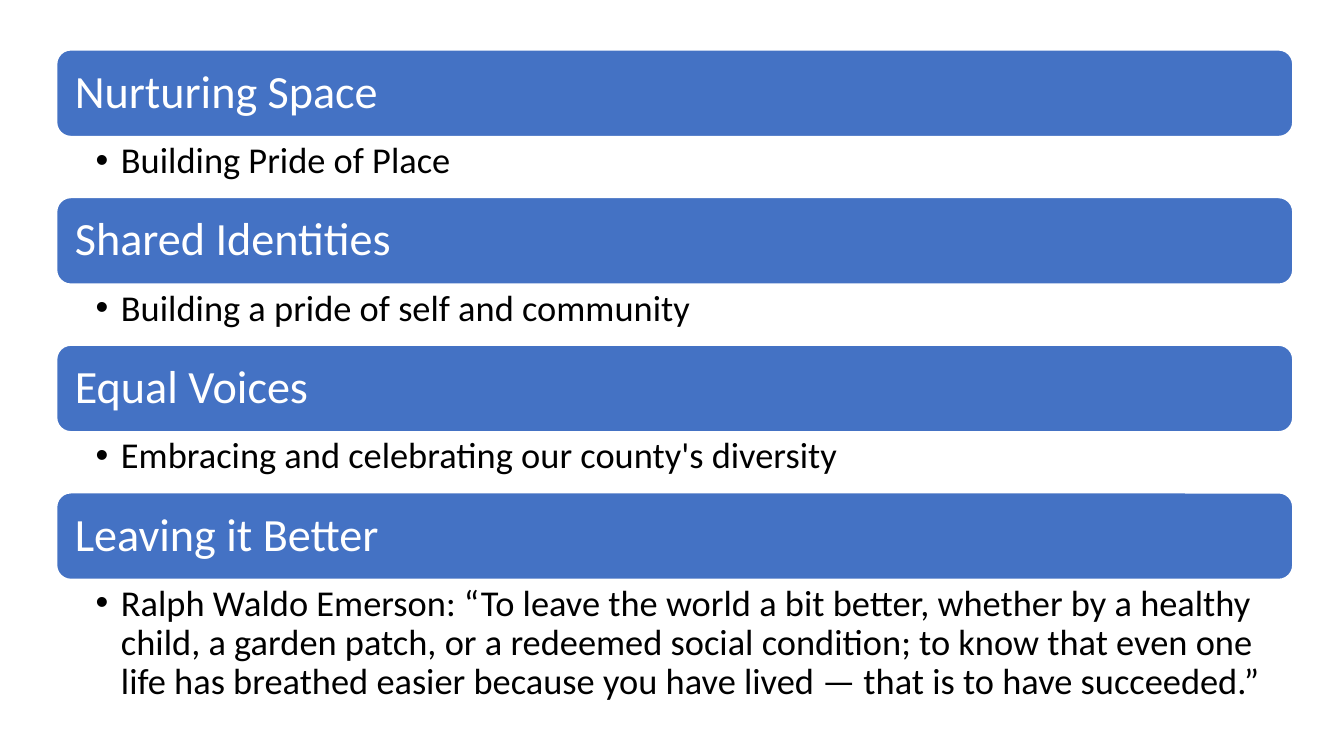
from lxml import etree
from pptx import Presentation
from pptx import util as u
from pptx.dml.color import RGBColor
from pptx.enum import shapes, text
from pptx.oxml import ns

BLUE = RGBColor(0x44, 0x72, 0xC4)
WHITE = RGBColor(0xFF, 0xFF, 0xFF)
BLACK = RGBColor(0x00, 0x00, 0x00)

LEFT, TOP, WIDTH = 1.42, 1.25, 31.17
BAR_HEIGHT, LINE_HEIGHT, QUOTE_HEIGHT = 2.2, 1.52, 3.33

VALUES = [
    ("Nurturing Space", "Building Pride of Place", LINE_HEIGHT),
    ("Shared Identities", "Building a pride of self and community", LINE_HEIGHT),
    ("Equal Voices", "Embracing and celebrating our county's diversity", LINE_HEIGHT),
    ("Leaving it Better",
     "Ralph Waldo Emerson: “To leave the world a bit better, whether by a healthy "
     "child, a garden patch, or a redeemed social condition; to know that even one "
     "life has breathed easier because you have lived — that is to have succeeded.”",
     QUOTE_HEIGHT),
]


def set_format(target, values):
    for name, value in values.items():
        setattr(target, name, value)


class ValuesSlide:
    """Draws heading bars and bulleted descriptions on one slide."""

    heading_frame = dict(
        word_wrap=True, vertical_anchor=text.MSO_ANCHOR.MIDDLE,
        margin_left=u.Cm(0.36), margin_right=u.Cm(0.36),
        margin_top=u.Cm(0.36), margin_bottom=u.Cm(0.36))
    heading_font = dict(name="Calibri", size=u.Pt(33))
    heading_paragraph = dict(
        alignment=text.PP_ALIGN.LEFT, line_spacing=0.9, space_after=u.Pt(11.5))
    body_frame = dict(
        word_wrap=True, vertical_anchor=text.MSO_ANCHOR.TOP,
        margin_left=u.Cm(0.99), margin_right=u.Cm(0.66),
        margin_top=u.Cm(0.13), margin_bottom=u.Cm(0.13))
    body_font = dict(name="Calibri", size=u.Pt(26))
    body_paragraph = dict(
        level=1, alignment=text.PP_ALIGN.LEFT, line_spacing=0.9, space_after=u.Pt(5))

    def __init__(self, slide):
        self.slide = slide

    def add_words(self, shape, words, frame, layout, font, color):
        set_format(shape.text_frame, frame)
        paragraph = shape.text_frame.paragraphs[0]
        set_format(paragraph, layout)
        run = paragraph.add_run()
        run.text = words
        set_format(run.font, font)
        run.font.color.rgb = color
        return paragraph

    def bar(self, top, words):
        shape = self.slide.shapes.add_shape(
            shapes.MSO_SHAPE.ROUNDED_RECTANGLE,
            u.Cm(LEFT), u.Cm(top), u.Cm(WIDTH), u.Cm(BAR_HEIGHT))
        shape.shadow.inherit = False
        shape.fill.solid()
        shape.fill.fore_color.rgb = BLUE
        shape.line.color.rgb = WHITE
        shape.line.width = u.Pt(1.5)
        self.add_words(shape, words, self.heading_frame, self.heading_paragraph,
                       self.heading_font, WHITE)

    def bullet(self, top, height, words):
        shape = self.slide.shapes.add_textbox(
            u.Cm(LEFT), u.Cm(top), u.Cm(WIDTH), u.Cm(height))
        paragraph = self.add_words(shape, words, self.body_frame, self.body_paragraph,
                                   self.body_font, BLACK)
        properties = paragraph._p.get_or_add_pPr()
        indent = u.Cm(0.64)
        properties.set("marL", str(indent))
        properties.set("indent", str(-indent))
        etree.SubElement(properties, ns.qn("a:buFont")).set("typeface", "Arial")
        etree.SubElement(properties, ns.qn("a:buChar")).set("char", "•")


def main():
    presentation = Presentation()
    presentation.slide_width = u.Cm(33.87)
    presentation.slide_height = u.Cm(19.05)
    values_slide = ValuesSlide(
        presentation.slides.add_slide(presentation.slide_layouts[6]))
    top = TOP
    for heading, description, height in VALUES:
        values_slide.bar(top, heading)
        values_slide.bullet(top + BAR_HEIGHT, height, description)
        top += BAR_HEIGHT + height
    presentation.save("out.pptx")


if __name__ == "__main__":
    main()
